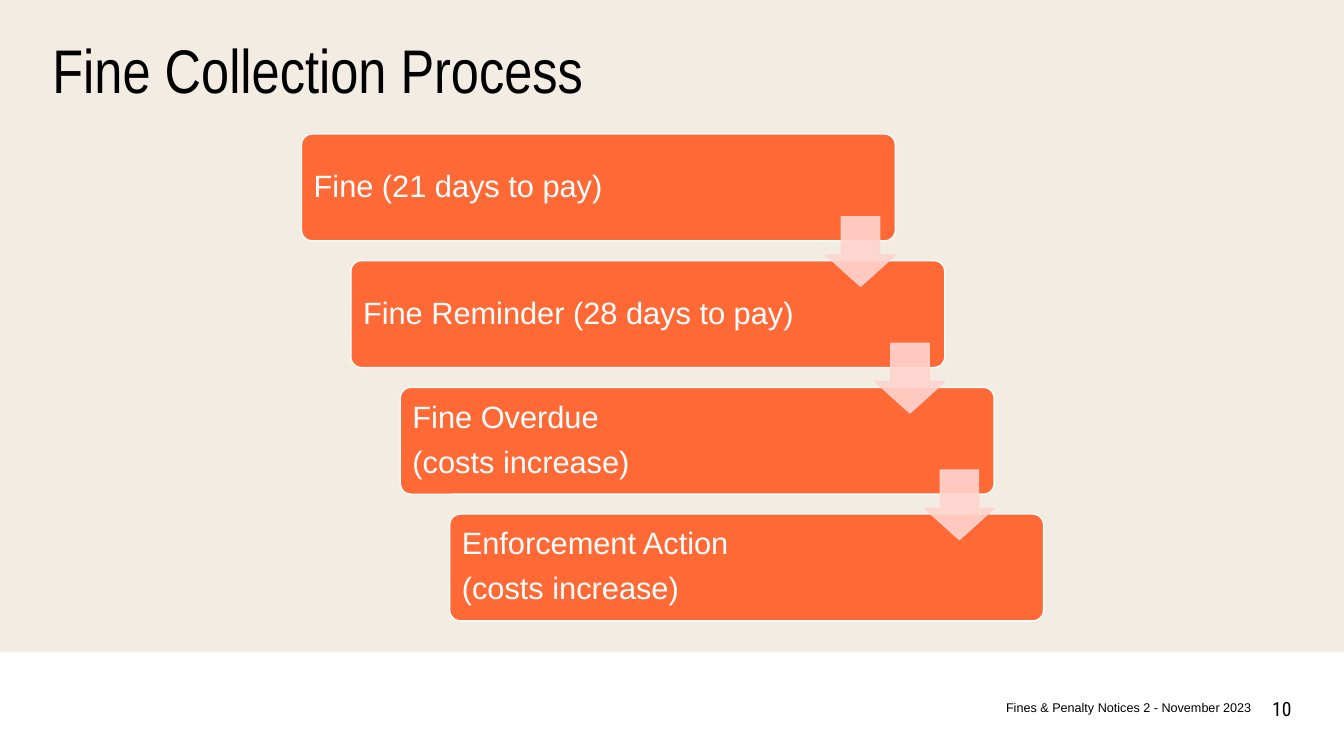
from dataclasses import dataclass

from lxml import etree
from pptx import Presentation
from pptx.dml.color import RGBColor
from pptx.enum import shapes, text
from pptx.oxml import ns
from pptx.util import Inches, Pt


@dataclass(frozen=True)
class Theme:
    band: str = "F3ECE3"
    step: str = "FF6936"
    arrow: str = "FFD4CE"
    light: str = "FFFFFF"
    dark: str = "000000"
    head: int = 44
    body: int = 22
    page: int = 14
    note: int = 9


THEME = Theme()
STEPS = [
    ["Fine (21 days to pay)"],
    ["Fine Reminder (28 days to pay)"],
    ["Fine Overdue", "(costs increase)"],
    ["Enforcement Action", "(costs increase)"],
]


def put(shape, lines, size, color, font="Arial", align=text.PP_ALIGN.LEFT,
        anchor=text.MSO_ANCHOR.TOP, inset=0, spacing=None, gap=0):
    frame = shape.text_frame
    frame.word_wrap = True
    frame.auto_size = text.MSO_AUTO_SIZE.NONE
    frame.vertical_anchor = anchor
    frame.margin_left = frame.margin_right = Inches(inset)
    frame.margin_top = frame.margin_bottom = 0
    for i, line in enumerate(lines):
        para = frame.add_paragraph() if i else frame.paragraphs[0]
        para.text = line
        para.alignment = align
        para.line_spacing = spacing
        para.space_before = Pt(gap if i else 0)
        para.font.size = Pt(size)
        para.font.name = font
        para.font.color.rgb = RGBColor.from_string(color)


def draw(slide, kind, box, fill, line=None, adjust=(), alpha=None):
    """Add a preset shape; alpha is its opacity in percent."""
    shape = slide.shapes.add_shape(kind, *map(Inches, box))
    shape.shadow.inherit = False
    shape.fill.solid()
    shape.fill.fore_color.rgb = RGBColor.from_string(fill)
    if line:
        shape.line.color.rgb = RGBColor.from_string(line)
        shape.line.width = Pt(1)
    else:
        shape.line.fill.background()
    for i, value in enumerate(adjust):
        shape.adjustments[i] = value
    if alpha:
        for color in shape._element.spPr.iter(ns.qn("a:srgbClr")):
            etree.SubElement(color, ns.qn("a:alpha")).set("val", str(alpha * 1000))
    return shape


def header(slide, box):
    title = slide.shapes.title
    title.left, title.top, title.width, title.height = map(Inches, box)
    put(title, ["Fine Collection Process"], THEME.head, THEME.dark,
        font="Arial Narrow", spacing=0.9)


def backdrop(slide, box):
    """Lay the tinted band behind the title."""
    band = draw(slide, shapes.MSO_SHAPE.RECTANGLE, box, THEME.band)
    slide.shapes.title._element.addprevious(band._element)


def stairs(slide, box):
    """Draw the steps from top left to bottom right, then the arrows over them."""
    left, top, width, height = box
    wide, high, side = 5.89, 1.06, 0.69
    last = len(STEPS) - 1
    across, down = (width - wide) / last, (height - high) / last
    spots = [(left + i * across, top + i * down) for i in range(len(STEPS))]
    for (x, y), lines in zip(spots, STEPS):
        card = draw(slide, shapes.MSO_SHAPE.ROUNDED_RECTANGLE, (x, y, wide, high),
                    THEME.step, line=THEME.light, adjust=[0.1])
        put(card, lines, THEME.body, THEME.light, anchor=text.MSO_ANCHOR.MIDDLE,
            inset=0.09, spacing=0.9, gap=8.5)
    for x, y in spots[:-1]:
        draw(slide, shapes.MSO_SHAPE.DOWN_ARROW,
             (x + wide - side, y + 0.82, side, side), THEME.arrow,
             line=THEME.arrow, adjust=[0.55, 0.45], alpha=90)


def footer(slide, box):
    left, top, width, height = box
    page = 0.39
    parts = [
        ("Fines & Penalty Notices 2 - November 2023", left, top + 0.03,
         width - page - 0.01, height - 0.09, THEME.note, "Arial"),
        ("10", left + width - page, top, page, height, THEME.page, "Roboto Condensed"),
    ]
    for words, x, y, w, h, size, font in parts:
        label = slide.shapes.add_textbox(*map(Inches, (x, y, w, h)))
        put(label, [words], size, THEME.dark, font=font,
            align=text.PP_ALIGN.RIGHT, anchor=text.MSO_ANCHOR.BOTTOM)


def main():
    deck = Presentation()
    deck.slide_width, deck.slide_height = Inches(13.33), Inches(7.5)
    slide = deck.slides.add_slide(deck.slide_layouts[5])
    backdrop(slide, (0, 0, 13.33, 6.47))
    header(slide, (0.52, 0.4, 12.28, 0.67))
    stairs(slide, (2.99, 1.33, 7.36, 4.83))
    footer(slide, (7.3, 6.91, 5.51, 0.24))
    deck.save("out.pptx")


if __name__ == "__main__":
    main()
